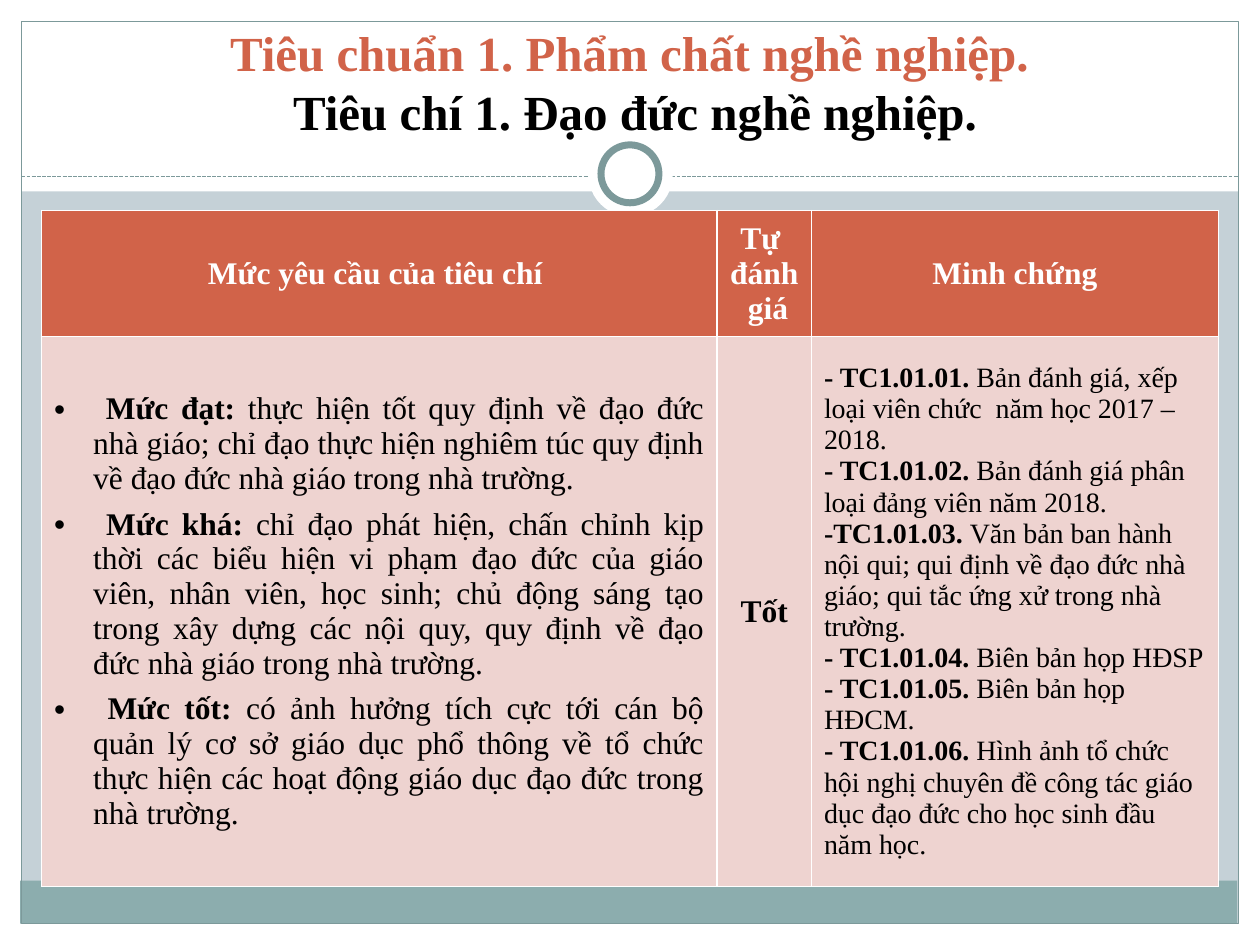
from lxml.etree import SubElement
from pptx import Presentation
from pptx.dml.color import RGBColor
from pptx.enum.dml import MSO_LINE
from pptx.enum.shapes import MSO_CONNECTOR, MSO_SHAPE
from pptx.enum.text import MSO_ANCHOR, PP_ALIGN
from pptx.oxml.ns import qn
from pptx.util import Inches, Pt

WHITE = RGBColor(0xFF, 0xFF, 0xFF)
BLACK = RGBColor(0x00, 0x00, 0x00)
ORANGE = RGBColor(0xD1, 0x63, 0x49)
PINK = RGBColor(0xEE, 0xD3, 0xD0)
TEAL = RGBColor(0x8C, 0xAD, 0xAE)
DARK_TEAL = RGBColor(0x7C, 0x99, 0x9A)
PALE_BLUE = RGBColor(0xC5, 0xD1, 0xD7)
FONT = "Times New Roman"

HEADINGS = [
    ["Mức yêu cầu của tiêu chí "],
    ["Tự ", "đánh  giá"],
    ["Minh chứng"],
]
LEVELS = [
    (" Mức đạt: ", "thực hiện tốt quy định về đạo đức nhà giáo; chỉ đạo thực hiện "
     "nghiêm túc quy định về đạo đức nhà giáo trong nhà trường."),
    (" Mức khá: ", "chỉ đạo phát hiện, chấn chỉnh kịp thời các biểu hiện vi phạm đạo đức "
     "của giáo viên, nhân viên, học sinh; chủ động sáng tạo trong xây dựng các nội quy, "
     "quy định về đạo đức nhà giáo trong nhà trường."),
    (" Mức tốt: ", "có ảnh hưởng tích cực tới cán bộ quản lý cơ sở giáo dục phổ thông về "
     "tổ chức thực hiện các hoạt động giáo dục đạo đức trong nhà trường. "),
]
EVIDENCE = [
    ("- TC1.01.01. ", "Bản đánh giá, xếp loại viên chức  năm học 2017 – 2018."),
    ("- TC1.01.02. ", "Bản đánh giá phân loại đảng viên năm 2018."),
    ("-TC1.01.03. ", "Văn bản ban hành nội qui; qui định về đạo đức nhà giáo; "
     "qui tắc ứng xử trong nhà trường."),
    ("- TC1.01.04. ", "Biên bản họp HĐSP"),
    ("- TC1.01.05. ", "Biên bản họp HĐCM."),
    ("- TC1.01.06. ", "Hình ảnh tổ chức hội nghị chuyên đề công tác giáo dục đạo đức "
     "cho học sinh đầu năm học."),
]


def add_panel(slide, kind, left, top, width, height, fill=None, line=None, weight=0.75):
    panel = slide.shapes.add_shape(
        kind, Inches(left), Inches(top), Inches(width), Inches(height))
    panel.shadow.inherit = False
    if fill is None:
        panel.fill.background()
    else:
        panel.fill.solid()
        panel.fill.fore_color.rgb = fill
    if line is None:
        panel.line.fill.background()
    else:
        panel.line.color.rgb = line
        panel.line.width = Pt(weight)


def add_divider(slide, left, right, top):
    divider = slide.shapes.add_connector(
        MSO_CONNECTOR.STRAIGHT, Inches(left), Inches(top), Inches(right), Inches(top))
    divider.line.color.rgb = DARK_TEAL
    divider.line.width = Pt(0.75)
    divider.line.dash_style = MSO_LINE.SQUARE_DOT
    SubElement(divider._element.spPr, qn("a:effectLst"))


def add_frame(slide):
    rectangle, ellipse = MSO_SHAPE.RECTANGLE, MSO_SHAPE.OVAL
    for margin in [(0, 7.33, 10, 0.17), (0, 0, 10, 1.52),
                   (0, 0, 0.17, 7.5), (9.83, 0, 0.17, 7.5)]:
        add_panel(slide, rectangle, *margin, fill=WHITE)
    add_panel(slide, rectangle, 0.16, 6.99, 9.66, 0.34, fill=TEAL)
    add_panel(slide, rectangle, 0.17, 0.17, 9.66, 7.16, line=DARK_TEAL)
    add_divider(slide, 0.17, 9.83, 1.4)
    add_panel(slide, ellipse, 4.67, 1.05, 0.67, 0.67, fill=WHITE)
    add_panel(slide, ellipse, 4.77, 1.15, 0.46, 0.46, fill=WHITE, line=DARK_TEAL, weight=4)


def add_title(slide):
    title = slide.shapes.add_textbox(Inches(0.33), Inches(0.08), Inches(9.33), Inches(1.08))
    frame = title.text_frame
    frame.word_wrap = True
    frame.vertical_anchor = MSO_ANCHOR.BOTTOM
    heading = frame.paragraphs[0]
    heading.alignment = PP_ALIGN.CENTER
    style_font(heading, 28)
    heading.font.bold = True
    standard = heading.add_run()
    standard.text = "Tiêu chuẩn 1. Phẩm chất nghề nghiệp."
    standard.font.color.rgb = ORANGE
    heading.add_line_break()
    heading.add_run().text = " Tiêu chí 1. Đạo đức nghề nghiệp."


def style_font(paragraph, size, color=BLACK):
    paragraph.font.name = FONT
    paragraph.font.size = Pt(size)
    paragraph.font.color.rgb = color


def add_bullet(paragraph):
    properties = paragraph._p.get_or_add_pPr()
    properties.set("marL", str(Inches(0.31)))
    properties.set("indent", str(-Inches(0.31)))
    SubElement(properties, qn("a:buFont"), typeface="Arial")
    SubElement(properties, qn("a:buChar"), char="•")


def fill_cell(cell, entries, fill, size, color=BLACK, align=PP_ALIGN.CENTER,
              bulleted=False):
    cell.fill.solid()
    cell.fill.fore_color.rgb = fill
    cell.vertical_anchor = MSO_ANCHOR.MIDDLE
    frame = cell.text_frame
    for index, (label, detail) in enumerate(entries):
        paragraph = frame.add_paragraph() if index else frame.paragraphs[0]
        paragraph.alignment = align
        if bulleted:
            add_bullet(paragraph)
            if index:
                paragraph.space_before = Pt(6)
        style_font(paragraph, size, color)
        for text, bold in ((label, True), (detail, False)):
            if text:
                run = paragraph.add_run()
                run.text = text
                run.font.bold = bold


def add_criteria_table(slide):
    table = slide.shapes.add_table(
        2, 3, Inches(0.33), Inches(1.67), Inches(9.34), Inches(5.25)).table
    table.horz_banding = False
    for column, width in zip(table.columns, (5.36, 0.75, 3.23)):
        column.width = Inches(width)
    for row, height in zip(table.rows, (0.97, 4.28)):
        row.height = Inches(height)
    for column, lines in enumerate(HEADINGS):
        fill_cell(table.cell(0, column), [(line, "") for line in lines], ORANGE, 18, WHITE)
    fill_cell(table.cell(1, 0), LEVELS, PINK, 18, align=PP_ALIGN.JUSTIFY, bulleted=True)
    fill_cell(table.cell(1, 1), [("Tốt", "")], PINK, 18)
    fill_cell(table.cell(1, 2), EVIDENCE, PINK, 16, align=PP_ALIGN.LEFT)


def main():
    presentation = Presentation()
    presentation.slide_width = Inches(10)
    presentation.slide_height = Inches(7.5)
    slide = presentation.slides.add_slide(presentation.slide_layouts[6])
    slide.background.fill.solid()
    slide.background.fill.fore_color.rgb = PALE_BLUE
    add_frame(slide)
    add_title(slide)
    add_criteria_table(slide)
    presentation.save("out.pptx")


if __name__ == "__main__":
    main()
